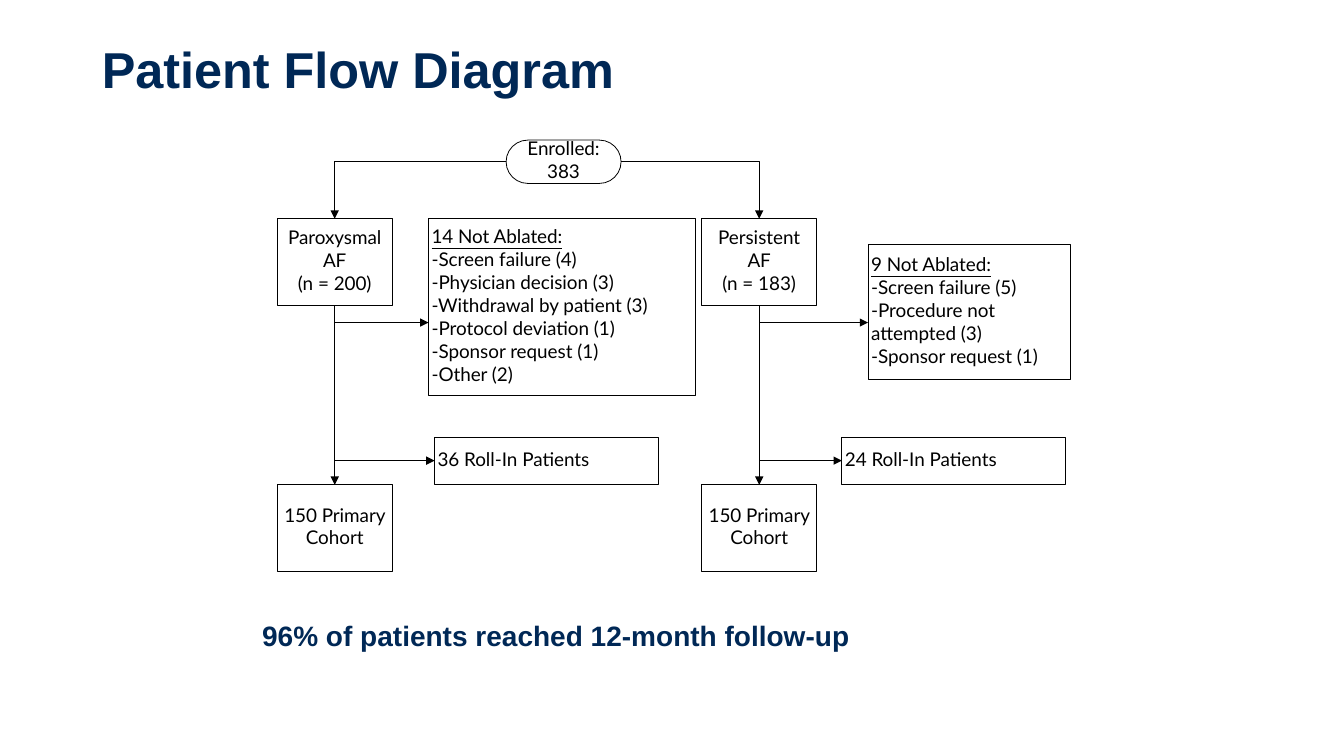
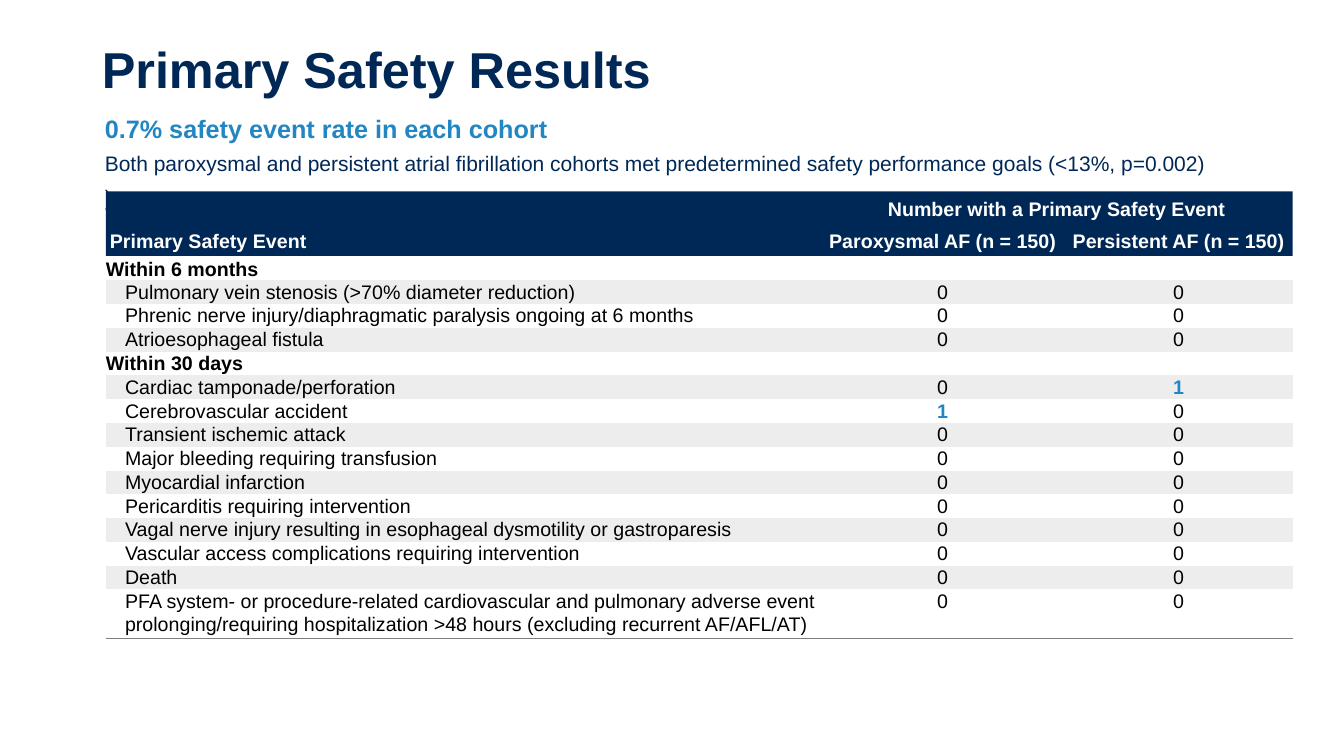
from lxml import etree
from pptx import Presentation
from pptx.dml.color import RGBColor
from pptx.enum.shapes import MSO_CONNECTOR, MSO_SHAPE
from pptx.enum.text import MSO_ANCHOR, MSO_AUTO_SIZE, PP_ALIGN
from pptx.oxml.ns import qn
from pptx.util import Inches, Pt

COLORS = {"navy": "002856", "blue": "2186C2", "black": "000000",
          "white": "FFFFFF", "stripe": "EDEDED", "rule": "7F7F7F"}
TITLE_AREA = (1.01, 0.38, 9.75, 0.63)
NO_GRID_STYLE = "{2D5ABB26-0587-4C30-8999-92F81FD0307C}"
TOP, LEFT, BOTTOM, RIGHT = range(4)  # connection sites of a box

# Flow diagram content: one entry per arm, places in inches
ENROLLED = ("Enrolled: 383", (5.02, 1.39, 1.14, 0.43))
ARM_SIZE = (1.14, 0.86)
ARM_TOP, COHORT_TOP = 2.17, 4.81
EXIT_Y, ROLL_IN_Y = 3.2, 4.57
ROLL_IN_SIZE = (2.22, 0.47)
ARMS = [
    {"left": 2.75, "leaves_from": LEFT,
     "arm": ["Paroxysmal AF", "(n = 200)"],
     "exits": ["14 Not Ablated:", "-Screen failure (4)",
               "-Physician decision (3)", "-Withdrawal by patient (3)",
               "-Protocol deviation (1)", "-Sponsor request (1)", "-Other (2)"],
     "exit_area": (4.25, 2.17, 2.65, 1.75),
     "roll_in": "36 Roll-In Patients", "roll_in_left": 4.31,
     "cohort": "150 Primary Cohort"},
    {"left": 6.96, "leaves_from": RIGHT,
     "arm": ["Persistent AF", "(n = 183)"],
     "exits": ["9 Not Ablated:", "-Screen failure (5)", "-Procedure not",
               "attempted (3)", "-Sponsor request (1)"],
     "exit_area": (8.61, 2.43, 2.01, 1.33),
     "roll_in": "24 Roll-In Patients", "roll_in_left": 8.35,
     "cohort": "150 Primary Cohort"},
]
FOLLOW_UP = "96% of patients reached 12-month follow-up"

# Safety table content
FINDING = "0.7% safety event rate in each cohort"
FINDING_DETAIL = ("Both paroxysmal and persistent atrial fibrillation cohorts met "
                  "predetermined safety performance goals (<13%, p=0.002)")
COUNT_HEADING = "Number with a Primary Safety Event"
COLUMN_HEADINGS = ["Primary Safety Event", "Paroxysmal AF (n = 150)",
                   "Persistent AF (n = 150)"]
FIRST_PERIOD = "Within 6 months"
EVENTS = [
    ("Pulmonary vein stenosis (>70% diameter reduction)", 0, 0),
    ("Phrenic nerve injury/diaphragmatic paralysis ongoing at 6 months", 0, 0),
    ("Atrioesophageal fistula", 0, 0),
    ("Within 30 days",),
    ("Cardiac tamponade/perforation", 0, 1),
    ("Cerebrovascular accident", 1, 0),
    ("Transient ischemic attack", 0, 0),
    ("Major bleeding requiring transfusion", 0, 0),
    ("Myocardial infarction", 0, 0),
    ("Pericarditis requiring intervention", 0, 0),
    ("Vagal nerve injury resulting in esophageal dysmotility or gastroparesis", 0, 0),
    ("Vascular access complications requiring intervention", 0, 0),
    ("Death", 0, 0),
    ("PFA system- or procedure-related cardiovascular and pulmonary adverse event\n"
     "prolonging/requiring hospitalization >48 hours (excluding recurrent "
     "AF/AFL/AT)", 0, 0),
]
TABLE_LEFT, TABLE_TOP = 1.05, 2.28
BAND_TOP, BAND_HEIGHT = 1.9, 0.64
COLUMN_WIDTHS = [7.09, 2.42, 2.26]
HEADING_ROW, LAST_ROW = 0.5, 0.49
EVENT_ROWS_HEIGHT = 3.07  # all event rows but the last


def rgb(color):
    return RGBColor.from_string(COLORS[color])


def inches(values):
    return [Inches(value) for value in values]


def write(frame, text, *, size=14, font="Arial", color="black", bold=False,
          underline=False, align=PP_ALIGN.LEFT, before=0, spacing=1.0, indent=0):
    """Add one paragraph to the frame, filling its empty first one if any."""
    first = not frame.text
    paragraph = frame.paragraphs[0] if first else frame.add_paragraph()
    paragraph.alignment = align
    paragraph.space_before = Pt(0 if first else before)
    paragraph.line_spacing = spacing
    paragraph._p.get_or_add_pPr().set("marL", str(Inches(indent)))
    if not text:
        paragraph._p.get_or_add_endParaRPr().set("sz", str(size * 100))
        return
    run = paragraph.add_run()
    run.text = text
    run.font.size = Pt(size)
    run.font.name = font
    run.font.bold = bold
    run.font.underline = underline
    run.font.color.rgb = rgb(color)


def prepare(frame, anchor=MSO_ANCHOR.TOP, side=0, bottom=0):
    frame.word_wrap = True
    frame.auto_size = MSO_AUTO_SIZE.NONE
    frame.vertical_anchor = anchor
    frame.margin_left = frame.margin_right = Inches(side)
    frame.margin_top = 0
    frame.margin_bottom = Inches(bottom)
    return frame


def add_text(slide, area):
    return prepare(slide.shapes.add_textbox(*inches(area)).text_frame)


def add_titled_slide(deck, title):
    slide = deck.slides.add_slide(deck.slide_layouts[5])
    heading = slide.shapes.title
    heading.left, heading.top, heading.width, heading.height = inches(TITLE_AREA)
    write(prepare(heading.text_frame), title, size=36, color="navy", bold=True)
    return slide


def add_box(slide, area, lines, *, side=0.0, align=PP_ALIGN.CENTER,
            underline_first=False, preset=MSO_SHAPE.RECTANGLE):
    box = slide.shapes.add_shape(preset, *inches(area))
    box.shadow.inherit = False
    box.fill.background()
    box.line.color.rgb = rgb("black")
    box.line.width = Pt(0.57)
    frame = prepare(box.text_frame, MSO_ANCHOR.MIDDLE, side, bottom=0.04)
    for index, line in enumerate(lines):
        write(frame, line, size=13.5, font="Lato", align=align, before=0.25,
              underline=underline_first and index == 0)
    return box


def add_arrow(slide, start=(0, 0), end=(0, 0), kind=MSO_CONNECTOR.STRAIGHT, glue=None):
    """Draw an arrow between points, or glued to (box, site, box, site)."""
    arrow = slide.shapes.add_connector(kind, *inches(start + end))
    if glue:
        arrow.begin_connect(*glue[:2])
        arrow.end_connect(*glue[2:])
    arrow.line.color.rgb = rgb("black")
    arrow.line.width = Pt(0.57)
    etree.SubElement(arrow.line._get_or_add_ln(), qn("a:tailEnd"), type="triangle")
    properties = arrow._element.spPr
    etree.SubElement(properties, qn("a:effectLst"))
    if kind == MSO_CONNECTOR.ELBOW:
        properties.find(qn("a:prstGeom")).set("prst", "bentConnector2")


def build_flow(deck):
    slide = add_titled_slide(deck, "Patient Flow Diagram")
    enrolled_text, enrolled_area = ENROLLED
    enrolled = add_box(slide, enrolled_area, [enrolled_text], side=0.12,
                       preset=MSO_SHAPE.ROUNDED_RECTANGLE)
    enrolled.adjustments[0] = 0.5
    listing = {"side": 0.03, "align": PP_ALIGN.LEFT}
    for branch in ARMS:
        left = branch["left"]
        trunk = left + ARM_SIZE[0] / 2
        roll_in_left = branch["roll_in_left"]
        arm = add_box(slide, (left, ARM_TOP, *ARM_SIZE), branch["arm"], side=0.09)
        cohort = add_box(slide, (left, COHORT_TOP, *ARM_SIZE), [branch["cohort"]])
        add_box(slide, branch["exit_area"], branch["exits"],
                underline_first=True, **listing)
        add_box(slide, (roll_in_left, COHORT_TOP - ROLL_IN_SIZE[1], *ROLL_IN_SIZE),
                [branch["roll_in"]], **listing)
        add_arrow(slide, kind=MSO_CONNECTOR.ELBOW,
                  glue=(enrolled, branch["leaves_from"], arm, TOP))
        add_arrow(slide, glue=(arm, BOTTOM, cohort, TOP))
        add_arrow(slide, (trunk, EXIT_Y), (branch["exit_area"][0], EXIT_Y))
        add_arrow(slide, (trunk, ROLL_IN_Y), (roll_in_left, ROLL_IN_Y))
    write(add_text(slide, (2.6, 6.14, 5.84, 0.36)), FOLLOW_UP,
          size=20, color="navy", bold=True)


def fill_cell(cell, text, *, fill=None, **text_format):
    cell.margin_left = cell.margin_right = 0
    cell.margin_top = cell.margin_bottom = 0
    if fill:
        cell.fill.solid()
        cell.fill.fore_color.rgb = rgb(fill)
    else:
        cell.fill.background()
    for line in text.split("\n"):
        write(cell.text_frame, line, spacing=Pt(16.5), **text_format)


def rule_below(cell):
    line = etree.Element(qn("a:lnB"), w=str(Pt(0.75)))
    solid = etree.SubElement(line, qn("a:solidFill"))
    etree.SubElement(solid, qn("a:srgbClr"), val=COLORS["rule"])
    cell._tc.get_or_add_tcPr().insert(0, line)


def add_heading_band(slide):
    area = (TABLE_LEFT, BAND_TOP, sum(COLUMN_WIDTHS), BAND_HEIGHT)
    band = slide.shapes.add_shape(MSO_SHAPE.RECTANGLE, *inches(area))
    band.shadow.inherit = False
    band.fill.solid()
    band.fill.fore_color.rgb = rgb("navy")
    band.line.fill.background()
    counts_left = TABLE_LEFT + COLUMN_WIDTHS[0]
    write(add_text(slide, (counts_left, 1.95, sum(COLUMN_WIDTHS[1:]), 0.26)),
          COUNT_HEADING, color="white", bold=True, align=PP_ALIGN.CENTER)


def add_safety_table(slide):
    event_row = EVENT_ROWS_HEIGHT / (len(EVENTS) - 1)
    heights = [HEADING_ROW] + [event_row] * (len(EVENTS) - 1) + [LAST_ROW]
    area = (TABLE_LEFT, TABLE_TOP, sum(COLUMN_WIDTHS), sum(heights))
    table = slide.shapes.add_table(len(heights), len(COLUMN_WIDTHS),
                                   *inches(area)).table
    table.first_row = table.horz_banding = False
    table._tbl.tblPr.find(qn("a:tableStyleId")).text = NO_GRID_STYLE
    for column, width in zip(table.columns, COLUMN_WIDTHS):
        column.width = Inches(width)
    for row, height in zip(table.rows, heights):
        row.height = Inches(height)

    for c, heading in enumerate(COLUMN_HEADINGS):
        place = {"align": PP_ALIGN.CENTER} if c else {"indent": 0.04}
        fill_cell(table.cell(0, c), heading, color="white", bold=True, **place)
    write(table.cell(0, 0).text_frame, FIRST_PERIOD, bold=True,
          before=3.6, spacing=Pt(15.9))

    for r, (event, *counts) in enumerate(EVENTS, 1):
        fill = "stripe" if r % 2 and counts and r < len(EVENTS) else None
        fill_cell(table.cell(r, 0), event, fill=fill, bold=not counts,
                  indent=0.19 if counts else 0)
        for c, count in enumerate(counts or ("", ""), 1):
            fill_cell(table.cell(r, c), str(count), fill=fill, bold=bool(count),
                      color="blue" if count else "black", align=PP_ALIGN.CENTER)
    for c in range(len(COLUMN_WIDTHS)):
        rule_below(table.cell(len(EVENTS), c))


def build_safety(deck):
    slide = add_titled_slide(deck, "Primary Safety Results")
    add_heading_band(slide)
    add_safety_table(slide)
    summary = add_text(slide, (1.04, 1.12, 11.2, 0.61))
    write(summary, FINDING, size=18, color="blue", bold=True)
    write(summary, FINDING_DETAIL, size=15, color="navy", before=5.4)
    write(add_text(slide, (1.04, 1.83, 0.1, 0.28)), ")", size=15, color="navy")


def main():
    deck = Presentation()
    deck.slide_width, deck.slide_height = Inches(13.33), Inches(7.5)
    build_flow(deck)
    build_safety(deck)
    deck.save("out.pptx")


if __name__ == "__main__":
    main()
